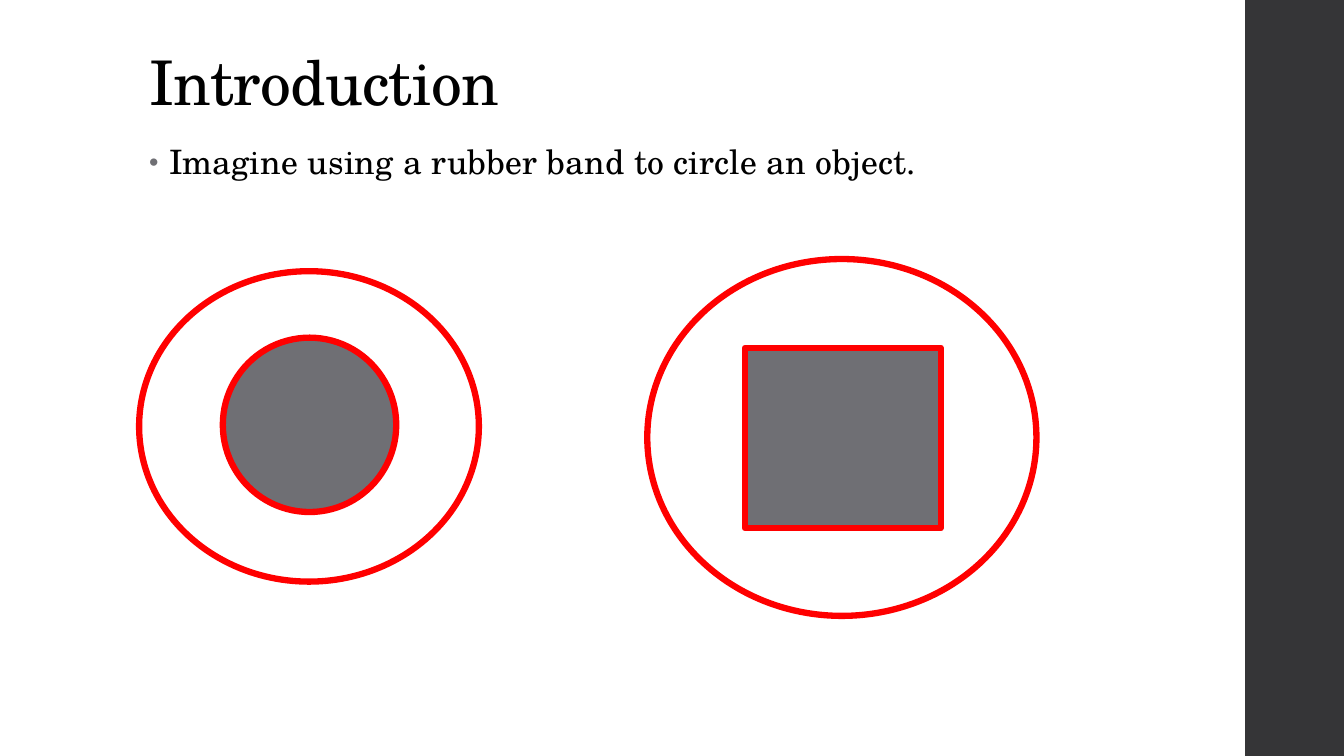
from dataclasses import dataclass
from typing import Optional

from lxml import etree
from pptx import Presentation
from pptx.dml.color import RGBColor
from pptx.enum.shapes import MSO_SHAPE
from pptx.enum.text import MSO_ANCHOR, MSO_AUTO_SIZE, PP_ALIGN
from pptx.oxml.ns import qn
from pptx.util import Inches, Pt

OVAL = MSO_SHAPE.OVAL
RECTANGLE = MSO_SHAPE.RECTANGLE
LEFT = PP_ALIGN.LEFT
TOP = MSO_ANCHOR.TOP
BOTTOM = MSO_ANCHOR.BOTTOM
NO_AUTOFIT = MSO_AUTO_SIZE.NONE

BLACK = RGBColor(0x00, 0x00, 0x00)
CHARCOAL = RGBColor(0x35, 0x35, 0x37)
GRAY = RGBColor(0x6F, 0x6F, 0x74)
RED = RGBColor(0xFF, 0x00, 0x00)
FONT = "TeX Gyre Schola"
BAND_WIDTH = 4.5


@dataclass
class Figure:
    """A preset shape; positions and sizes in inches."""
    kind: MSO_SHAPE
    left: float
    top: float
    width: float
    height: float
    fill: Optional[RGBColor] = None
    outline: Optional[RGBColor] = RED


SIDE_BAR = Figure(RECTANGLE, 12.35, 0, 0.98, 7.5, CHARCOAL, None)
RUBBER_BANDS = [
    Figure(OVAL, 1.38, 2.69, 3.37, 3.08),
    Figure(OVAL, 6.42, 2.57, 3.86, 3.54),
]
OBJECTS = [
    Figure(OVAL, 2.21, 3.35, 1.72, 1.73, GRAY),
    Figure(RECTANGLE, 7.39, 3.45, 1.94, 1.79, GRAY),
]


def draw_figure(slide, figure: Figure) -> None:
    shape = slide.shapes.add_shape(
        figure.kind, Inches(figure.left), Inches(figure.top),
        Inches(figure.width), Inches(figure.height))
    shape.shadow.inherit = False
    if figure.fill is None:
        shape.fill.background()
    else:
        shape.fill.solid()
        shape.fill.fore_color.rgb = figure.fill
    if figure.outline is None:
        shape.line.fill.background()
    else:
        shape.line.color.rgb = figure.outline
        shape.line.width = Pt(BAND_WIDTH)


def format_text(frame, size: int, line_spacing: float, tracking: int) -> None:
    """Style a one-paragraph frame; tracking is in hundredths of a point."""
    frame.word_wrap = True
    frame.auto_size = NO_AUTOFIT
    paragraph = frame.paragraphs[0]
    paragraph.alignment = LEFT
    paragraph.line_spacing = line_spacing
    run = paragraph.runs[0]
    run.font.name = FONT
    run.font.size = Pt(size)
    run.font.color.rgb = BLACK
    run.font._element.set("spc", str(tracking))


def add_bullet(paragraph, color: RGBColor, percent: int) -> None:
    properties = paragraph._p.get_or_add_pPr()
    indent = Inches(0.2)
    properties.set("marL", str(indent))
    properties.set("indent", str(-indent))
    bullet_color = etree.SubElement(properties, qn("a:buClr"))
    etree.SubElement(bullet_color, qn("a:srgbClr"), val=str(color))
    etree.SubElement(properties, qn("a:buSzPct"), val=str(percent * 1000))
    etree.SubElement(properties, qn("a:buFont"), typeface="Arial")
    etree.SubElement(properties, qn("a:buChar"), char="•")


def main() -> None:
    prs = Presentation()
    prs.slide_width = Inches(13.33)
    prs.slide_height = Inches(7.5)
    slide = prs.slides.add_slide(prs.slide_layouts[5])

    draw_figure(slide, SIDE_BAR)

    # Heading
    heading = slide.shapes.title
    heading.left, heading.top = Inches(1.38), Inches(0.4)
    heading.width, heading.height = Inches(10.6), Inches(0.83)
    heading.text_frame.text = "Introduction"
    heading.text_frame.vertical_anchor = BOTTOM
    format_text(heading.text_frame, 44, 0.9, -50)

    # Introductory point
    intro = slide.shapes.add_textbox(
        Inches(1.38), Inches(1.38), Inches(9.4), Inches(5.38)).text_frame
    intro.text = "Imagine using a rubber band to circle an object."
    intro.vertical_anchor = TOP
    format_text(intro, 24, 0.95, 10)
    point = intro.paragraphs[0]
    point.space_before = Pt(14)
    point.space_after = Pt(2)
    add_bullet(point, GRAY, 80)

    # Rubber bands, loose and then tight around each object
    for figure in RUBBER_BANDS + OBJECTS:
        draw_figure(slide, figure)

    prs.save("out.pptx")


if __name__ == "__main__":
    main()
